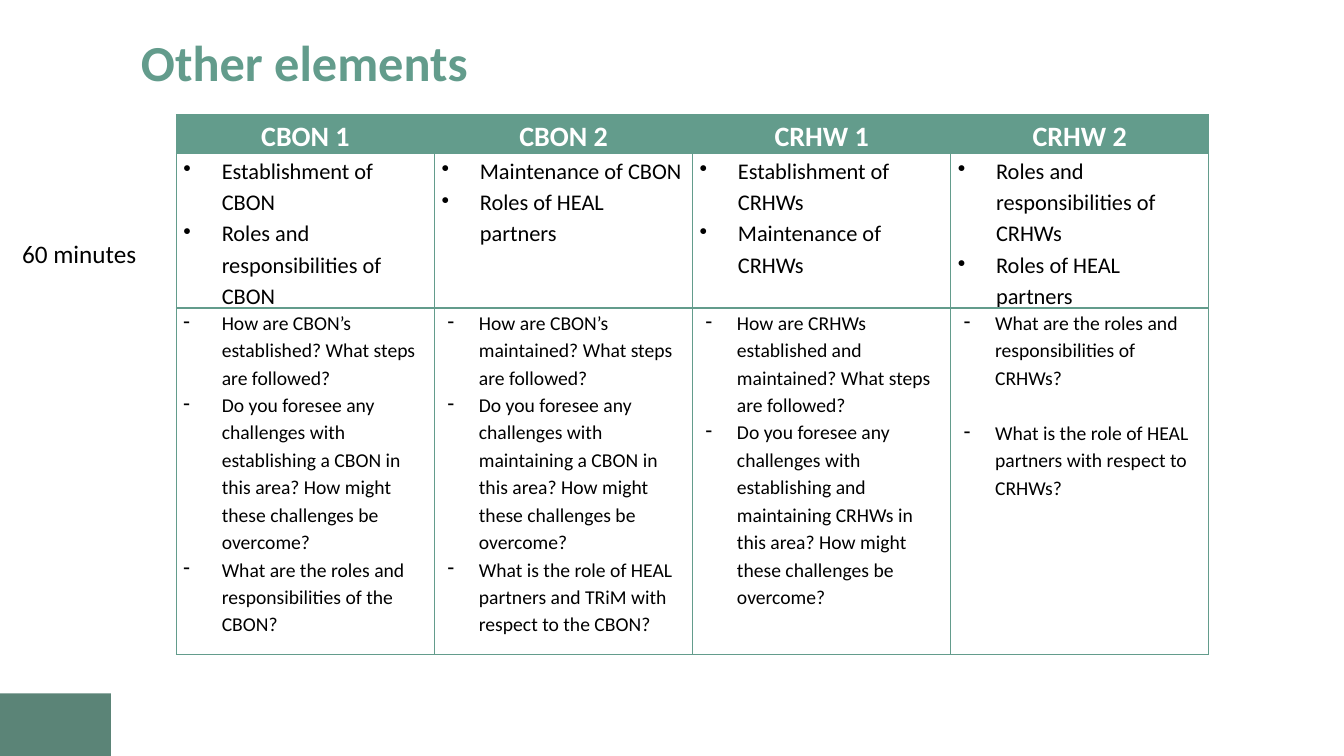
"""Build the "Other elements" slide with its table of session topics."""
from dataclasses import dataclass

import pptx
import pptx.dml.color
import pptx.enum.shapes
import pptx.enum.text
import pptx.oxml
import pptx.oxml.ns
import pptx.util

PX = 9144
GREEN = "639C8C"
DARK = "5B8477"
WHITE = "FFFFFF"
BLACK = "000000"
ALIGN = pptx.enum.text.PP_ALIGN
ANCHOR = pptx.enum.text.MSO_ANCHOR
ROWS = (33, 139, 344)
WIDTH = 256


@dataclass(frozen=True)
class Session:
    name: str
    topics: tuple[str, ...]
    asks: tuple[str, ...]
    left: int = 37
    hang: int = 31
    gap: int = 0


SESSIONS = (
    Session(
        "CBON 1",
        ("Establishment of CBON", "Roles and responsibilities of CBON"),
        ("How are CBON’s established? What steps are followed?",
         "Do you foresee any challenges with establishing a CBON in this area? "
         "How might these challenges be overcome?",
         "What are the roles and responsibilities of the CBON?"),
        left=38, hang=38),
    Session(
        "CBON 2",
        ("Maintenance of CBON", "Roles of HEAL partners"),
        ("How are CBON’s maintained? What steps are followed?",
         "Do you foresee any challenges with maintaining a CBON in this area? "
         "How might these challenges be overcome?",
         "What is the role of HEAL partners and TRiM with respect to the CBON?")),
    Session(
        "CRHW 1",
        ("Establishment of CRHWs", "Maintenance of CRHWs"),
        ("How are CRHWs established and maintained? What steps are followed?",
         "Do you foresee any challenges with establishing and maintaining CRHWs "
         "in this area? How might these challenges be overcome?")),
    Session(
        "CRHW 2",
        ("Roles and responsibilities of CRHWs", "Roles of HEAL partners"),
        ("What are the roles and responsibilities of CRHWs?",
         "What is the role of HEAL partners with respect to CRHWs?"),
        gap=20),
)


def px(num: int) -> pptx.util.Emu:
    """Turn px into EMU."""
    return pptx.util.Emu(num * PX)


def color(code: str) -> pptx.dml.color.RGBColor:
    """Turn a hex string into a colour."""
    return pptx.dml.color.RGBColor.from_string(code)


def write(frame, *lines: str, size: int, ink: str = BLACK, bold: bool = False,
          align=ALIGN.LEFT, lead: float = 1.0, after: int = 0, gap: int = 0,
          mark: str = "", left: int = 0, hang: int = 0) -> None:
    """Fill a text frame with one paragraph per line."""
    for num, line in enumerate(lines):
        para = frame.add_paragraph() if num else frame.paragraphs[0]
        if mark:
            props = para._p.get_or_add_pPr()
            props.set("marL", str(px(left)))
            props.set("indent", str(px(-hang)))
            bullet = pptx.oxml.parse_xml(
                f'<a:buChar {pptx.oxml.ns.nsdecls("a")} char="{mark}"/>')
            props.append(bullet)
        para.alignment = align
        para.line_spacing = lead
        para.space_before = pptx.util.Pt(gap if num else 0)
        para.space_after = pptx.util.Pt(after)
        run = para.add_run()
        run.text = line
        run.font.name = "Calibri"
        run.font.size = pptx.util.Pt(size)
        run.font.bold = bold
        run.font.color.rgb = color(ink)


def label(slide, left: int, top: int, wide: int, high: int, text: str,
          anchor=ANCHOR.TOP, **form) -> None:
    """Add a wrapped text box."""
    box = slide.shapes.add_textbox(px(left), px(top), px(wide), px(high))
    box.text_frame.word_wrap = True
    box.text_frame.vertical_anchor = anchor
    write(box.text_frame, text, **form)


def style(cell, fill: str = "") -> None:
    """Set the margins, fill and borders of a cell."""
    cell.margin_left = cell.margin_right = px(7)
    cell.margin_top = cell.margin_bottom = 0
    if fill:
        cell.fill.solid()
        cell.fill.fore_color.rgb = color(fill)
    else:
        cell.fill.background()
    props = cell._tc.get_or_add_tcPr()
    for num, side in enumerate("LRTB"):
        props.insert(num, pptx.oxml.parse_xml(
            f'<a:ln{side} {pptx.oxml.ns.nsdecls("a")} w="12700"><a:solidFill>'
            f'<a:srgbClr val="{GREEN}"/></a:solidFill></a:ln{side}>'))


def grid(slide) -> None:
    """Add the table of sessions."""
    table = slide.shapes.add_table(
        len(ROWS), len(SESSIONS), px(175), px(114),
        px(WIDTH * len(SESSIONS)), px(sum(ROWS))).table
    for row, high in zip(table.rows, ROWS):
        row.height = px(high)
    for num, item in enumerate(SESSIONS):
        table.columns[num].width = px(WIDTH)
        head, topic, ask = (table.cell(row, num) for row in range(len(ROWS)))
        style(head, GREEN)
        style(topic)
        style(ask)
        write(head.text_frame, item.name, size=20, ink=WHITE, bold=True,
              align=ALIGN.CENTER, lead=1.15, after=12)
        write(topic.text_frame, *item.topics, size=16, lead=1.15,
              mark="•", left=38, hang=38)
        write(ask.text_frame, *item.asks, size=14, lead=1.15, gap=item.gap,
              mark="-", left=item.left, hang=item.hang)


def main() -> None:
    """Build and save the slide."""
    deck = pptx.Presentation()
    deck.slide_width, deck.slide_height = px(1333), px(750)
    slide = deck.slides.add_slide(deck.slide_layouts[6])
    block = slide.shapes.add_shape(
        pptx.enum.shapes.MSO_SHAPE.RECTANGLE, 0, px(688), px(110), px(66))
    block.shadow.inherit = False
    block.fill.solid()
    block.fill.fore_color.rgb = color(DARK)
    block.line.fill.background()
    label(slide, 130, 29, 1111, 71, "Other elements", anchor=ANCHOR.MIDDLE,
          size=36, ink=GREEN, bold=True, lead=0.9)
    grid(slide)
    label(slide, 9, 232, 139, 40, "60 minutes", size=18, align=ALIGN.CENTER)
    deck.save("out.pptx")


if __name__ == "__main__":
    main()
